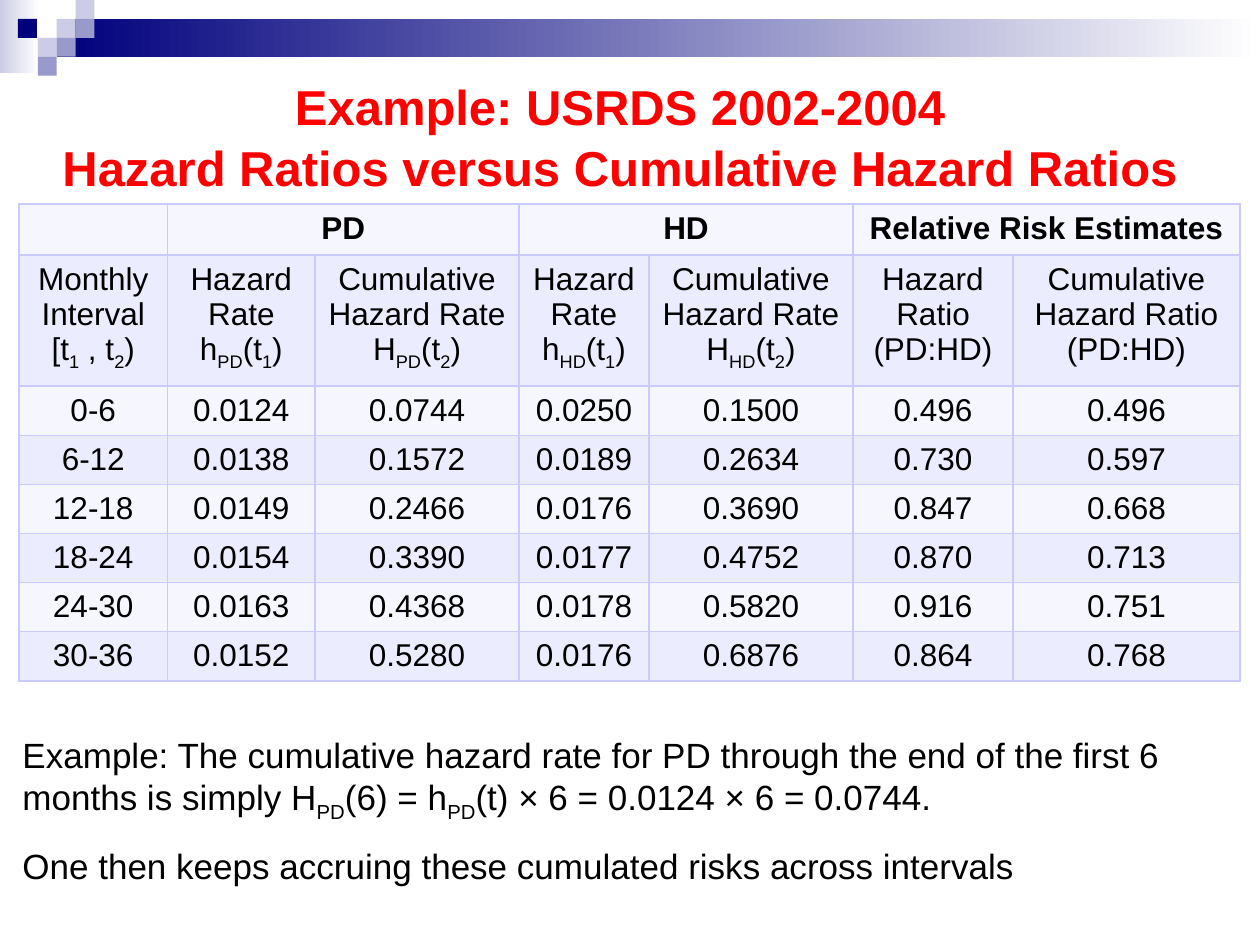
from pptx import Presentation, util as u
from pptx.dml.color import RGBColor
from pptx.enum import shapes, text
from pptx.oxml import parse_xml
from pptx.oxml.ns import nsdecls

CELL = 0.15  # inches per grid step, across and down
PALE, MID, NAVY, WHITE = "CCCCE6", "9999CC", "00007D", "FFFFFF"

# column, row, width, height, fill (two colours make a gradient)
BANDS = [
    (0, 0, 2.07, 3.87, (PALE, WHITE)),
    (3, 1, 63.67, 2, (NAVY, WHITE)),
]
SQUARES = [
    (3, 1, PALE), (4, 0, PALE), (4, 1, MID), (2, 2, PALE),
    (0.95, 1, NAVY), (3, 2, MID), (2, 3, MID),
]

# Text between tildes is set as a subscript; a newline starts a paragraph.
TITLE = "Example: USRDS 2002-2004\vHazard Ratios versus Cumulative Hazard Ratios"
GROUPS = ["", "PD", "", "HD", "", "Relative Risk Estimates", ""]
HEADS = [
    "Monthly\nInterval\n[t~1~ , t~2~)",
    "Hazard Rate\nh~PD~(t~1~)",
    "Cumulative\nHazard Rate H~PD~(t~2~)",
    "Hazard Rate\nh~HD~(t~1~)",
    "Cumulative\nHazard Rate\nH~HD~(t~2~)",
    "Hazard\nRatio\n(PD:HD)",
    "Cumulative Hazard Ratio (PD:HD)",
]
RATES = [
    ["0-6", "0.0124", "0.0744", "0.0250", "0.1500", "0.496", "0.496"],
    ["6-12", "0.0138", "0.1572", "0.0189", "0.2634", "0.730", "0.597"],
    ["12-18", "0.0149", "0.2466", "0.0176", "0.3690", "0.847", "0.668"],
    ["18-24", "0.0154", "0.3390", "0.0177", "0.4752", "0.870", "0.713"],
    ["24-30", "0.0163", "0.4368", "0.0178", "0.5820", "0.916", "0.751"],
    ["30-36", "0.0152", "0.5280", "0.0176", "0.6876", "0.864", "0.768"],
]
WIDTHS = [7.87, 7.8, 10.8, 6.87, 10.8, 8.47, 12]
HEIGHTS = [2.67, 6.93] + [2.6] * len(RATES)
NOTE = (
    "Example: The cumulative hazard rate for PD through the end of the first 6 "
    "months is simply H~PD~(6) = h~PD~(t) × 6 = 0.0124 × 6 = 0.0744.\n"
    "One then keeps accruing these cumulated risks across intervals"
)


def grid(*steps):
    return [u.Inches(step * CELL) for step in steps]


def hue(code):
    return RGBColor.from_string(code)


class Deck:
    font, ink, red = "Arial", "000000", "FF0000"
    edge, rows = "CACAFF", ("F6F6FF", "ECECFF")

    def __init__(self):
        self.prs = Presentation()
        self.prs.slide_width, self.prs.slide_height = u.Inches(10), u.Inches(7.5)
        self.slide = self.prs.slides.add_slide(self.prs.slide_layouts[5])

    def style(self, run, size, color, bold=False):
        run.font.name, run.font.size, run.font.bold = self.font, u.Pt(size), bold
        run.font.color.rgb = hue(color)

    def lines(self, frame, words, size, bold=False, align=None, gap=0):
        """Fill a frame with paragraphs, lowering the parts between tildes."""
        for i, line in enumerate(words.split("\n")):
            para = frame.add_paragraph() if i else frame.paragraphs[0]
            para.alignment = align
            para.space_before = u.Pt(gap if i else 0)
            for j, part in enumerate(line.split("~")):
                run = para.add_run()
                run.text = part
                self.style(run, size, self.ink, bold)
                if j % 2:
                    run.font._element.set("baseline", "-25000")

    def rect(self, x, y, w, h, *fill):
        box = self.slide.shapes.add_shape(
            shapes.MSO_SHAPE.RECTANGLE, *grid(x, y, w, h))
        box.shadow.inherit = False
        box.line.fill.background()
        if len(fill) == 1:
            box.fill.solid()
            box.fill.fore_color.rgb = hue(fill[0])
            return
        box.fill.gradient()
        box.fill.gradient_angle = 0
        for stop, code in zip(box.fill.gradient_stops, fill):
            stop.color.rgb = hue(code)

    def title(self, words, x, y, w, h):
        head = self.slide.shapes.title
        head.element.getparent().append(head.element)
        head.left, head.top, head.width, head.height = grid(x, y, w, h)
        frame = head.text_frame
        frame.text = words
        frame.auto_size = text.MSO_AUTO_SIZE.NONE
        frame.vertical_anchor = text.MSO_ANCHOR.MIDDLE
        para = frame.paragraphs[0]
        para.alignment = text.PP_ALIGN.CENTER
        para.line_spacing = 1.05
        for run in para.runs:
            self.style(run, 28, self.red, True)

    def border(self, cell):
        props = cell._tc.get_or_add_tcPr()
        for side in "LRTB":
            props.append(parse_xml(
                f'<a:ln{side} {nsdecls("a")} w="12700"><a:solidFill>'
                f'<a:srgbClr val="{self.edge}"/></a:solidFill></a:ln{side}>'))

    def table(self, x, y, data, widths, heights):
        table = self.slide.shapes.add_table(
            len(data), len(widths), *grid(x, y, sum(widths), sum(heights))).table
        for col, width in zip(table.columns, grid(*widths)):
            col.width = width
        for row, height in zip(table.rows, grid(*heights)):
            row.height = height
        for c in range(1, len(widths), 2):
            table.cell(0, c).merge(table.cell(0, c + 1))
        for r, line in enumerate(data):
            for c, words in enumerate(line):
                cell = table.cell(r, c)
                self.border(cell)
                cell.fill.solid()
                cell.fill.fore_color.rgb = hue(self.rows[r % 2])
                if words:
                    self.lines(cell.text_frame, words, 18, r == 0,
                               text.PP_ALIGN.CENTER)

    def note(self, words, x, y, w, h):
        frame = self.slide.shapes.add_textbox(*grid(x, y, w, h)).text_frame
        frame.word_wrap = True
        self.lines(frame, words, 20, gap=12)


def main():
    deck = Deck()
    for x, y, w, h, fill in BANDS:
        deck.rect(x, y, w, h, *fill)
    for x, y, fill in SQUARES:
        deck.rect(x, y, 1, 1, fill)
    deck.title(TITLE, 0, 3.87, 65.6, 6.53)
    deck.table(1, 10.8, [GROUPS, HEADS] + RATES, WIDTHS, HEIGHTS)
    deck.note(NOTE, 0.53, 38.47, 65.53, 8.53)
    deck.prs.save("out.pptx")


if __name__ == "__main__":
    main()
